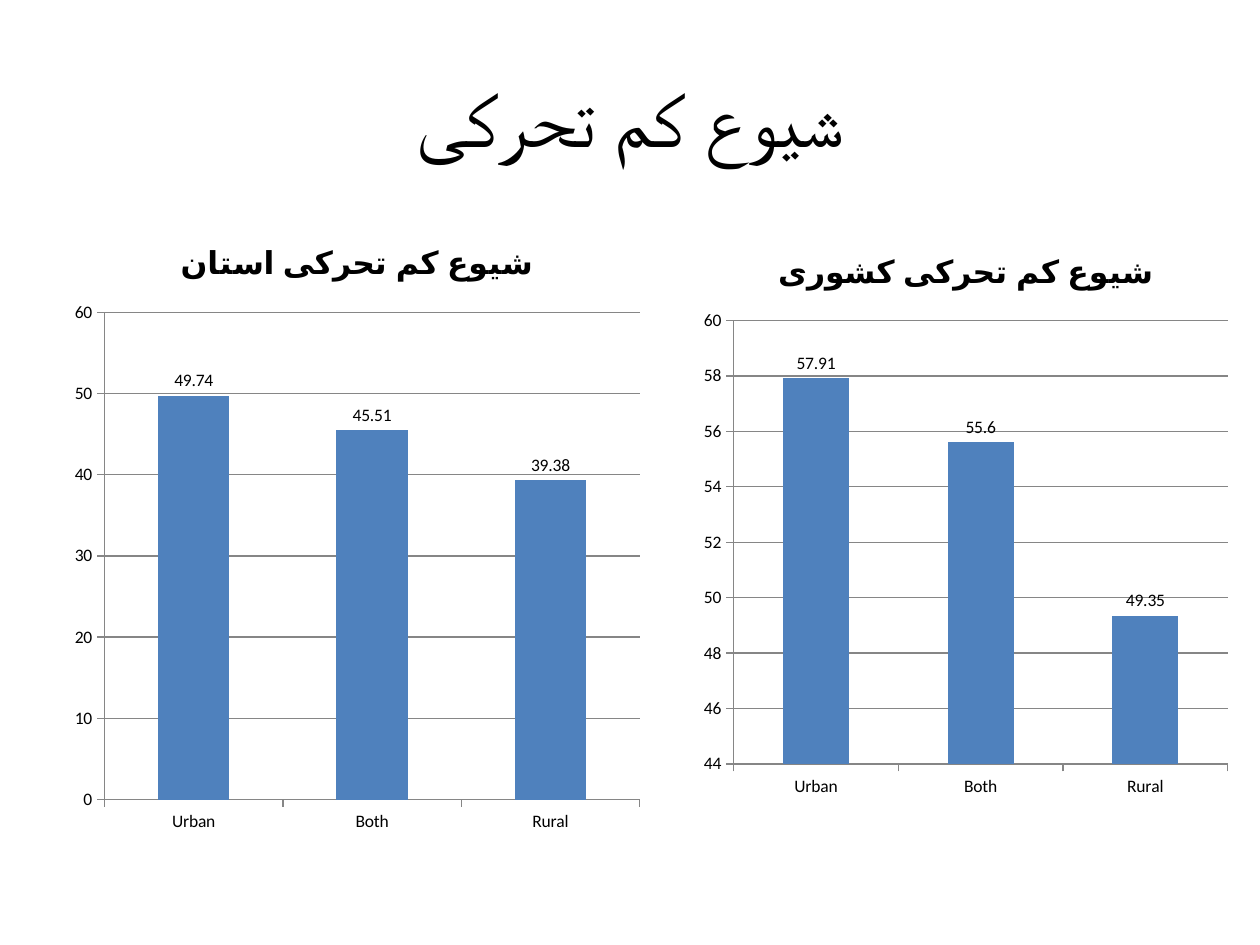
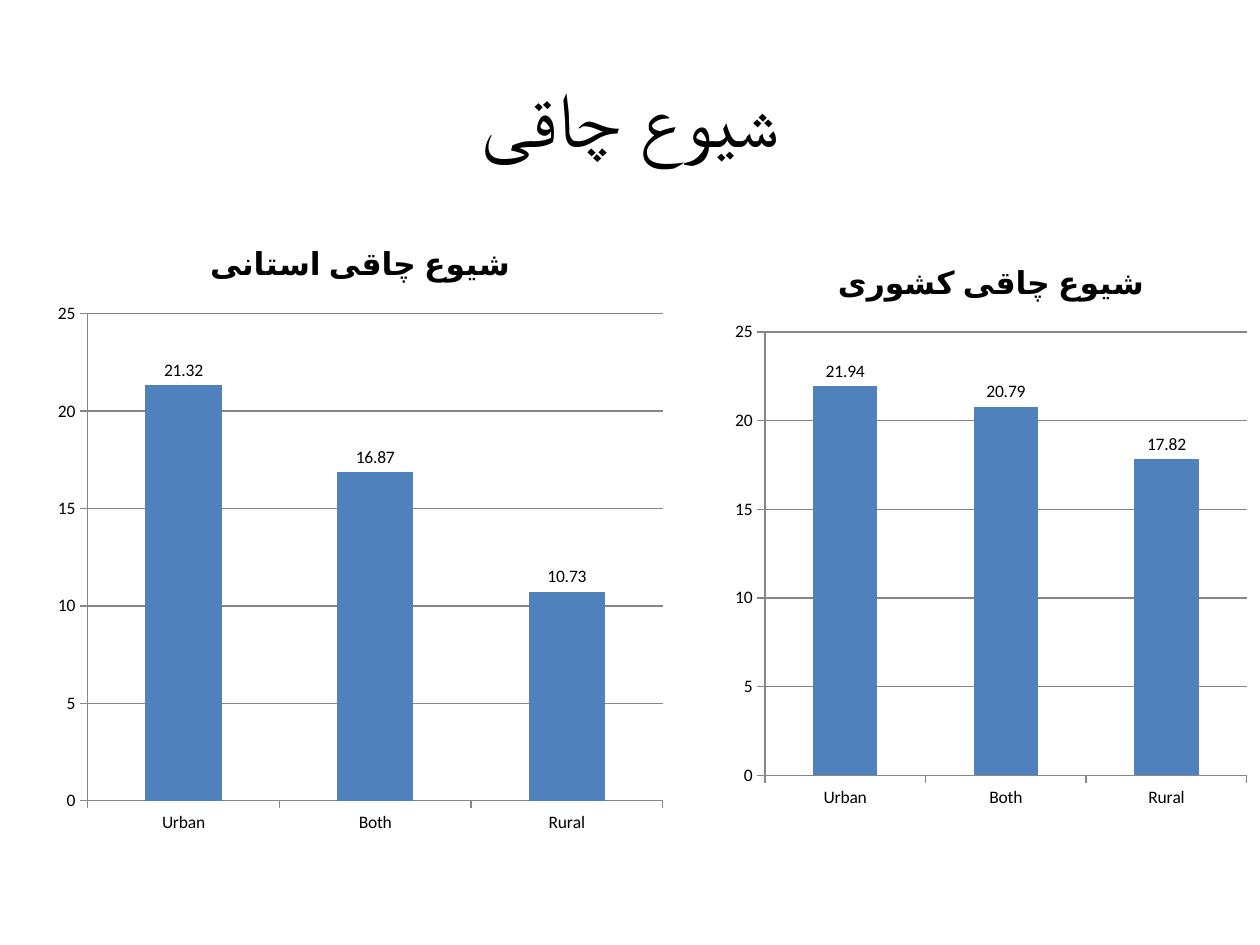
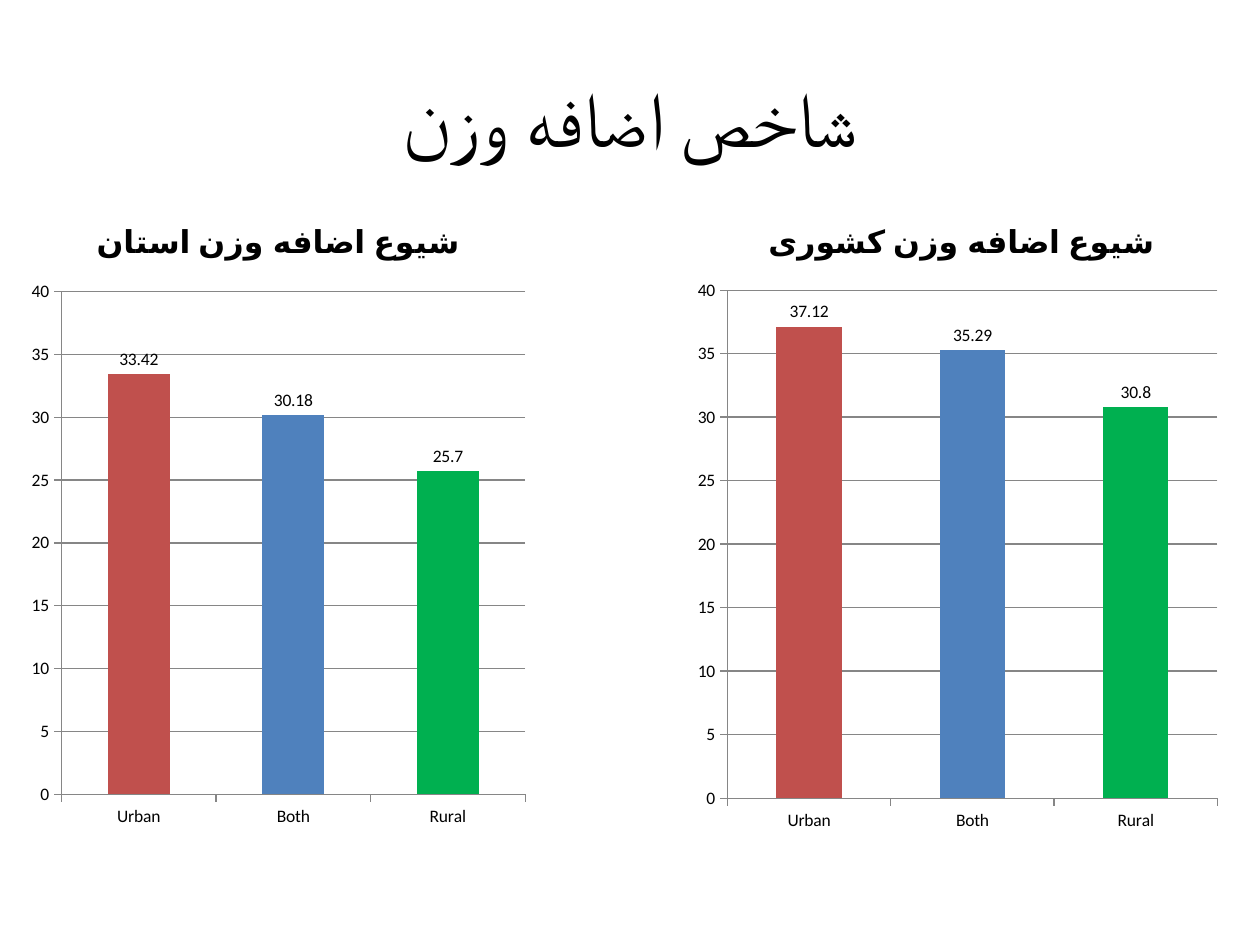
import pptx
import pptx.util
import pptx.oxml
import pptx.oxml.ns
import pptx.chart.data
import pptx.dml.color
import pptx.enum.chart
import pptx.enum.text

PX = 9144  # EMU in one px, at 100 px to the inch
FONT = "Calibri"
BLACK = pptx.dml.color.RGBColor(0x00, 0x00, 0x00)
GREY = pptx.dml.color.RGBColor(0x86, 0x86, 0x86)
BLUE = pptx.dml.color.RGBColor(0x4F, 0x81, 0xBD)
RED = pptx.dml.color.RGBColor(0xC0, 0x50, 0x4D)
GREEN = pptx.dml.color.RGBColor(0x00, 0xB0, 0x50)

TITLE_BOX = (50, 30, 900, 125)
AREAS = ("Urban", "Both", "Rural")
PLAIN = (BLUE, BLUE, BLUE)
BY_AREA = (RED, BLUE, GREEN)

# Each chart: box, title, values, axis (minimum, maximum, step), inner plot area
SLIDES = [
    ("شیوع کم تحرکی", PLAIN, [
        ((50, 175, 467, 495), "شیوع کم تحرکی استان",
         (49.74, 45.51, 39.38), (0, 60, 10), None),
        ((550, 183, 433, 458), "شیوع کم تحرکی کشوری",
         (57.91, 55.6, 49.35), (44, 60, 2), None),
    ]),
    ("شیوع چاقی", PLAIN, [
        ((36, 176, 500, 495), "شیوع چاقی استانی",
         (21.32, 16.87, 10.73), (0, 25, 5), None),
        ((575, 192, 423, 458), "شیوع چاقی کشوری",
         (21.94, 20.79, 17.82), (0, 25, 5), None),
    ]),
    ("شاخص اضافه وزن", BY_AREA, [
        ((542, 158, 442, 517), "شیوع اضافه وزن کشوری",
         (37.12, 35.29, 30.8), (0, 40, 5), (0.08, 0.14, 0.88, 0.78)),
        ((17, 158, 408, 508), "شیوع اضافه وزن استان",
         (33.42, 30.18, 25.7), (0, 40, 5), None),
    ]),
]


def emu(box):
    return [v * PX for v in box]


def set_font(font, size, bold=False):
    values = {"name": FONT, "size": pptx.util.Pt(size), "bold": bold}
    for name, value in values.items():
        setattr(font, name, value)
    font.color.rgb = BLACK


def set_line(fmt):
    fmt.line.color.rgb = GREY
    fmt.line.width = pptx.util.Pt(0.75)


def add_title(s, text):
    sp = s.shapes.title
    sp.left, sp.top, sp.width, sp.height = emu(TITLE_BOX)
    tf = sp.text_frame
    tf.vertical_anchor = pptx.enum.text.MSO_ANCHOR.MIDDLE
    p = tf.paragraphs[0]
    p.alignment = pptx.enum.text.PP_ALIGN.CENTER
    r = p.add_run()
    r.text = text
    set_font(r.font, 44)


def set_plot_area(chart, fractions):
    """Fix the inner plot area at x, y, w, h, as fractions of the chart."""
    sizes = "".join(f'<c:{k} val="{v}"/>' for k, v in zip("xywh", fractions))
    layout = pptx.oxml.parse_xml(
        f'<c:layout {pptx.oxml.ns.nsdecls("c")}><c:manualLayout>'
        '<c:layoutTarget val="inner"/><c:xMode val="edge"/>'
        f'<c:yMode val="edge"/>{sizes}</c:manualLayout></c:layout>')
    area = chart.plots[0]._element.getparent()
    for old in area.findall(pptx.oxml.ns.qn("c:layout")):
        area.remove(old)
    area.insert(0, layout)


def format_axes(chart, scale):
    for axis in (chart.category_axis, chart.value_axis):
        axis.major_tick_mark = pptx.enum.chart.XL_TICK_MARK.OUTSIDE
        axis.minor_tick_mark = pptx.enum.chart.XL_TICK_MARK.NONE
        set_line(axis.format)
    axis = chart.value_axis
    for name, value in zip(("minimum_scale", "maximum_scale", "major_unit"), scale):
        setattr(axis, name, value)
    axis.has_major_gridlines = True
    set_line(axis.major_gridlines.format)


def format_columns(plot, colors):
    plot.gap_width = 150
    plot.vary_by_categories = False
    series = plot.series[0]
    series.format.fill.solid()
    series.format.fill.fore_color.rgb = BLUE
    for i, color in enumerate(colors):
        if color != BLUE:
            fill = series.points[i].format.fill
            fill.solid()
            fill.fore_color.rgb = color
    plot.has_data_labels = True
    labels = plot.data_labels
    labels.show_value = True
    labels.position = pptx.enum.chart.XL_LABEL_POSITION.OUTSIDE_END


def add_column_chart(s, colors, box, title, values, scale, plot_area):
    data = pptx.chart.data.CategoryChartData()
    data.categories = AREAS
    data.add_series(title, values)
    kind = pptx.enum.chart.XL_CHART_TYPE.COLUMN_CLUSTERED
    chart = s.shapes.add_chart(kind, *emu(box), data).chart
    set_font(chart.font, 10)
    chart.has_legend = False
    chart.has_title = True
    chart.chart_title.include_in_layout = False
    p = chart.chart_title.text_frame.paragraphs[0]
    r = p.add_run()
    r.text = title
    set_font(r.font, 18, bold=True)
    format_axes(chart, scale)
    format_columns(chart.plots[0], colors)
    if plot_area:
        set_plot_area(chart, plot_area)


def add_comparison_slide(prs, title, colors, charts):
    s = prs.slides.add_slide(prs.slide_layouts.get_by_name("Title Only"))
    add_title(s, title)
    for chart in charts:
        add_column_chart(s, colors, *chart)


def main():
    prs = pptx.Presentation()
    prs.slide_width, prs.slide_height = emu((1000, 750))
    for slide in SLIDES:
        add_comparison_slide(prs, *slide)
    prs.save("out.pptx")


if __name__ == "__main__":
    main()
